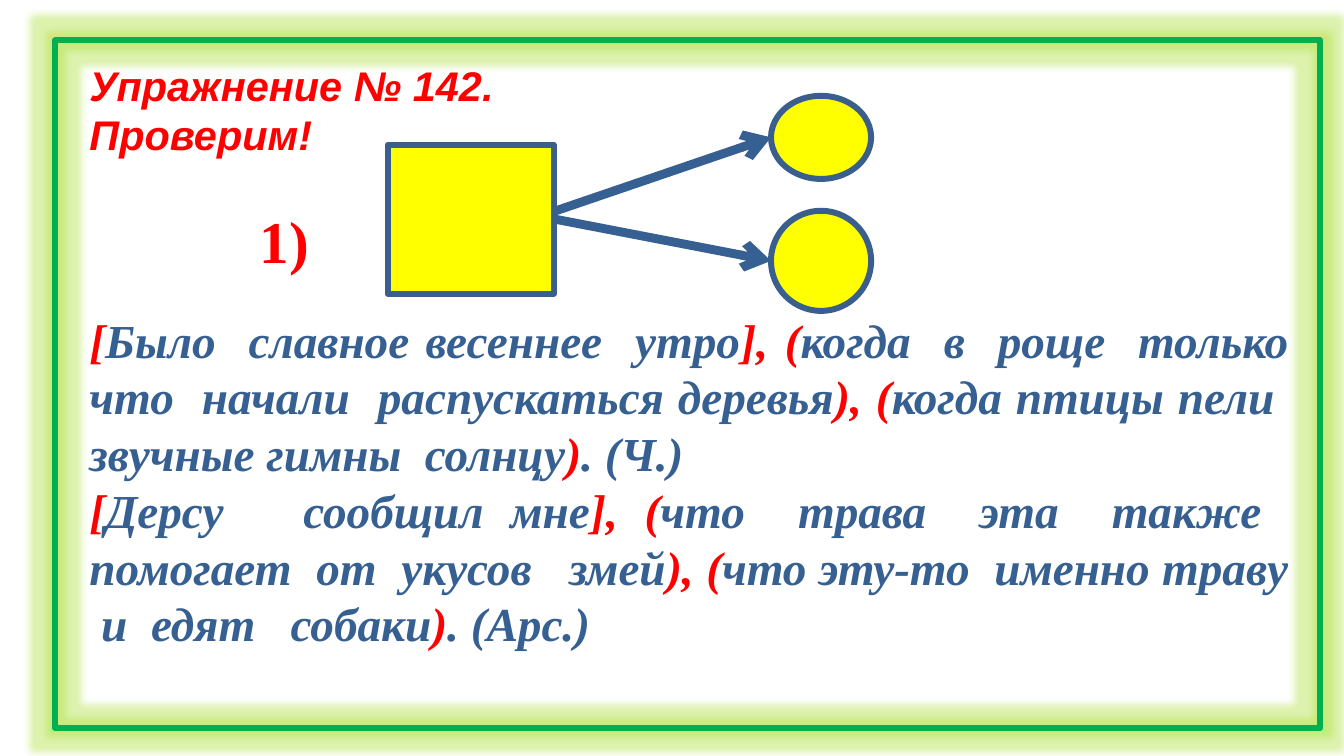
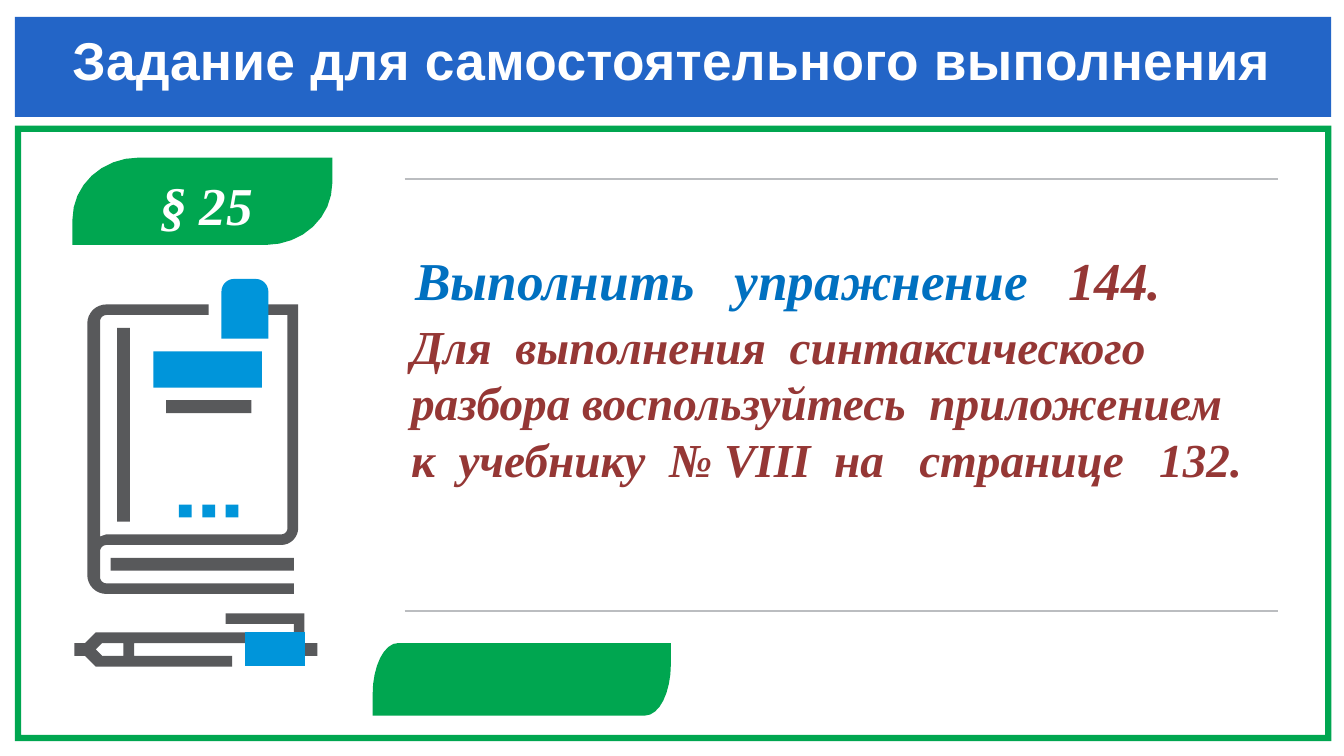
from itertools import cycle
from math import cos, pi, sin

from lxml.etree import SubElement
from pptx import Presentation
from pptx.dml.color import RGBColor
from pptx.enum.shapes import MSO_CONNECTOR, MSO_SHAPE
from pptx.enum.text import MSO_ANCHOR, MSO_AUTO_SIZE, PP_ALIGN
from pptx.oxml.ns import qn
from pptx.util import Inches, Pt

RED = RGBColor(0xFF, 0x00, 0x00)
YELLOW = RGBColor(0xFF, 0xFF, 0x00)
WHITE = RGBColor(0xFF, 0xFF, 0xFF)
INK_BLUE = RGBColor(0x37, 0x60, 0x92)
OUTLINE_BLUE = RGBColor(0x3A, 0x5F, 0x8C)
FRAME_GREEN = RGBColor(0x00, 0xB0, 0x50)
GLOW_GREEN = RGBColor(0xA8, 0xDF, 0x32)
LEAF_GREEN = RGBColor(0x00, 0xA6, 0x50)
BAND_BLUE = RGBColor(0x23, 0x65, 0xC7)
TASK_BLUE = RGBColor(0x00, 0x70, 0xC0)
MAROON = RGBColor(0x95, 0x37, 0x35)
RULE_GRAY = RGBColor(0xBB, 0xBD, 0xC0)
ICON_GRAY = RGBColor(0x58, 0x59, 0x5B)
ICON_BLUE = RGBColor(0x00, 0x95, 0xDA)

HEADING_FONT = "Arial"
TEXT_FONT = "Times New Roman"


# Shared helpers

def style(shape, fill=None, line=None, width=1):
    shape.shadow.inherit = False
    if fill is None:
        shape.fill.background()
    else:
        shape.fill.solid()
        shape.fill.fore_color.rgb = fill
    if line is None:
        shape.line.fill.background()
    else:
        shape.line.color.rgb = line
        shape.line.width = Pt(width)
    return shape


def add_preset(slide, kind, box, **look):
    return style(slide.shapes.add_shape(kind, *map(Inches, box)), **look)


def add_outline(slide, left, top, contours, color):
    """One filled shape made of closed contours given relative to left, top."""
    builder = None
    for contour in contours:
        corners = [(Inches(left + x), Inches(top + y)) for x, y in contour]
        if builder is None:
            builder = slide.shapes.build_freeform(*corners[0])
        else:
            builder.move_to(*corners[0])
        builder.add_line_segments(corners[1:], close=True)
    return style(builder.convert_to_shape(), fill=color)


def add_line(slide, start, end, color, width, arrow=False):
    connector = slide.shapes.add_connector(
        MSO_CONNECTOR.STRAIGHT, *map(Inches, (*start, *end)))
    connector.line.color.rgb = color
    connector.line.width = Pt(width)
    if arrow:
        SubElement(connector.line._get_or_add_ln(), qn("a:tailEnd"), type="arrow")
    SubElement(connector._element.spPr, qn("a:effectLst"))


def arc(center, radii, start):
    """Points of a clockwise quarter ellipse from the start angle."""
    angles = [start + step * pi / 16 for step in range(9)]
    return [(center[0] + radii[0] * cos(angle), center[1] + radii[1] * sin(angle))
            for angle in angles]


def round_arc(x, y, radius, start):
    return arc((x, y), (radius, radius), start)


def bar(x, y, width, height):
    return [(x, y), (x + width, y), (x + width, y + height), (x, y + height)]


def add_leaf(slide, box, radii):
    left, top, width, height = box
    across, down = radii
    contour = [(width, 0), *arc((across, down), radii, pi)[::-1], (0, height),
               *arc((width - across, height - down), radii, 0)[::-1]]
    return add_outline(slide, left, top, [contour], LEAF_GREEN)


def place_text(shape, box):
    shape.left, shape.top, shape.width, shape.height = map(Inches, box)
    return reset_frame(shape.text_frame)


def reset_frame(frame, anchor=MSO_ANCHOR.TOP):
    frame.margin_left = frame.margin_right = frame.margin_top = frame.margin_bottom = 0
    frame.word_wrap = True
    frame.auto_size = MSO_AUTO_SIZE.NONE
    frame.vertical_anchor = anchor
    return frame


def write(frame, lines, size, font, italic=True, alignment=PP_ALIGN.LEFT,
          before=0, indent=0):
    """Append one paragraph for each line, a line being (text, colour) runs."""
    for runs in lines:
        first = frame.paragraphs[0]
        paragraph = frame.add_paragraph() if first.runs else first
        paragraph.alignment = alignment
        paragraph.line_spacing = 1.0
        paragraph.space_before = Pt(before)
        properties = paragraph._p.get_or_add_pPr()
        properties.set("marL", "0")
        properties.set("indent", str(Inches(indent)))
        SubElement(properties, qn("a:buNone"))
        paragraph.font.size = Pt(size)
        paragraph.font.name = font
        paragraph.font.bold = True
        paragraph.font.italic = italic
        for text, color in runs:
            run = paragraph.add_run()
            run.text = text
            run.font.color.rgb = color


# Slide 1: checked exercise

SENTENCES = [
    ["[", "Было  славное весеннее  утро", "], (",
     "когда  в  роще  только что  начали  распускаться деревья", "), (",
     "когда птицы пели  звучные гимны  солнцу", ")", ". (Ч.)"],
    ["[", "Дерсу   сообщил мне", "], (",
     "что  трава  эта  также  помогает  от  укусов   змей", "), (",
     "что эту-то  именно траву  и  едят   собаки", ")", ". (Арс.)"],
]


def add_scheme(slide, left, top):
    """Main clause square with arrows to two subordinate clauses."""
    look = {"fill": YELLOW, "line": OUTLINE_BLUE, "width": 2}
    add_preset(slide, MSO_SHAPE.RECTANGLE, (left, top + 0.23, 0.78, 0.7), **look)
    for clause_top, height, start in ((0, 0.39, 0.54), (0.54, 0.47, 0.58)):
        add_preset(slide, MSO_SHAPE.OVAL,
                   (left + 1.8, top + clause_top, 0.47, height), **look)
        add_line(slide, (left + 0.79, top + start),
                 (left + 1.8, top + clause_top + height / 2), INK_BLUE, 3, arrow=True)


def add_glowing_frame(slide, box):
    frame = add_preset(slide, MSO_SHAPE.RECTANGLE, box, line=FRAME_GREEN, width=2)
    effects = frame._element.spPr.find(qn("a:effectLst"))
    glow = SubElement(effects, qn("a:glow"), rad=str(Pt(5)))
    color = SubElement(glow, qn("a:srgbClr"), val=str(GLOW_GREEN))
    SubElement(color, qn("a:alpha"), val="40000")


def build_exercise(slide):
    title, body = slide.placeholders
    write(place_text(title, (0.42, 0.28, 2.5, 0.5)),
          [[("Упражнение № 142.", RED)], [("Проверим!", RED)]], 14, HEADING_FONT)
    write(place_text(body, (0.42, 1.46, 5.63, 1.7)),
          [list(zip(parts, cycle((RED, INK_BLUE)))) for parts in SENTENCES],
          16, TEXT_FONT, alignment=PP_ALIGN.JUSTIFY)
    add_scheme(slide, 1.82, 0.45)
    number = slide.shapes.add_textbox(0, 0, 0, 0)
    write(place_text(number, (1.22, 0.96, 0.4, 0.34)), [[("1)", RED)]],
          20, TEXT_FONT, italic=False)
    add_glowing_frame(slide, (0.26, 0.19, 5.94, 3.23))


# Slide 2: homework

def add_book(slide, left, top):
    # Cover with page edge, spine and lines
    cover = [
        (0.99, 0.12), (0.83, 0.12), (0.83, 0.17), (0.94, 0.17),
        *round_arc(0.91, 1.17, 0.03, 0), (0.09, 1.2), (0.06, 1.21),
        *round_arc(0.09, 0.2, 0.03, pi), (0.57, 0.17), (0.57, 0.12),
        *round_arc(0.09, 0.21, 0.09, pi)[::-1],
        *round_arc(0.09, 1.39, 0.09, pi / 2)[::-1],
        (0.97, 1.48), (0.97, 1.43),
        *round_arc(0.09, 1.4, 0.03, pi / 2), *round_arc(0.09, 1.28, 0.03, pi),
        *round_arc(0.91, 1.17, 0.08, 0)[::-1],
    ]
    add_outline(slide, left, top, [
        bar(0.14, 0.23, 0.06, 0.91), bar(0.37, 0.57, 0.4, 0.06),
        bar(0.11, 1.31, 0.86, 0.06), cover], ICON_GRAY)
    # Dots, label and bookmark
    dots = [bar(0.43 + 0.11 * index, 1.06, 0.06, 0.06) for index in range(3)]
    bookmark = [*round_arc(0.69, 0.06, 0.06, pi), *round_arc(0.79, 0.06, 0.06, -pi / 2),
                (0.85, 0.28), (0.63, 0.28)]
    add_outline(slide, left, top,
                [*dots, bar(0.31, 0.34, 0.51, 0.17), bookmark], ICON_BLUE)


def add_pen(slide, left, top):
    body = [(1.08, 0), (0.71, 0), (0.71, 0.05), (1.03, 0.05), (1.03, 0.09),
            (0.1, 0.09), (0.05, 0.14), (0, 0.14), (0, 0.2), (0.05, 0.2),
            (0.1, 0.25), (0.74, 0.25), (0.74, 0.2), (0.13, 0.2), (0.1, 0.17),
            (0.13, 0.14), (1.08, 0.14)]
    add_outline(slide, left, top,
                [body, bar(0.23, 0.14, 0.05, 0.06), bar(1.08, 0.14, 0.06, 0.06)],
                ICON_GRAY)
    add_outline(slide, left, top, [bar(0.8, 0.09, 0.28, 0.16)], ICON_BLUE)


def add_title_band(slide, title, box):
    left, top, width, height = box
    add_preset(slide, MSO_SHAPE.RECTANGLE, box, fill=BAND_BLUE)
    # The band lies behind the title
    slide.shapes._spTree.append(title._element)
    frame = place_text(title, (left + 0.27, top + 0.05, width - 0.27, 0.32))
    write(frame, [[("Задание для самостоятельного выполнения", WHITE)]],
          18, HEADING_FONT, italic=False)
    frame.paragraphs[0].runs[0]._r.get_or_add_rPr().set("spc", "10")


def add_task(slide, body, left, top, width):
    for offset in (0, 2.03):
        add_line(slide, (left, top + offset), (left + width, top + offset),
                 RULE_GRAY, 0.48)
    frame = place_text(body, (left + 0.03, top + 0.32, 3.97, 1.4))
    write(frame, [[("Выполнить   упражнение   ", TASK_BLUE), ("144.", MAROON)]],
          18, TEXT_FONT, indent=0.02)
    write(frame, [[("Для  выполнения  синтаксического  разбора воспользуйтесь  "
                    "приложением  к  учебнику  № VIII  на   странице   132.", MAROON)]],
          16, TEXT_FONT, before=2)


def build_homework(slide):
    title, body = slide.placeholders
    border = add_preset(slide, MSO_SHAPE.FRAME, (0.07, 0.59, 6.18, 2.89),
                        fill=LEAF_GREEN)
    border.adjustments[0] = 0.01
    add_title_band(slide, title, (0.07, 0.08, 6.18, 0.47))
    section = add_leaf(slide, (0.34, 0.74, 1.22, 0.41), (0.31, 0.29))
    frame = reset_frame(section.text_frame, MSO_ANCHOR.MIDDLE)
    frame.margin_left, frame.margin_top = Inches(0.04), Inches(0.03)
    write(frame, [[("§ 25", WHITE)]], 18, TEXT_FONT, alignment=PP_ALIGN.CENTER)
    add_leaf(slide, (1.75, 3.02, 1.4, 0.34), (0.12, 0.24))
    add_book(slide, 0.41, 1.31)
    add_pen(slide, 0.35, 2.88)
    add_task(slide, body, 1.9, 0.84, 4.1)


def main():
    presentation = Presentation()
    presentation.slide_width = Inches(6.31)
    presentation.slide_height = Inches(3.55)
    layout = presentation.slide_layouts[1]
    for build in (build_exercise, build_homework):
        build(presentation.slides.add_slide(layout))
    presentation.save("out.pptx")


if __name__ == "__main__":
    main()
